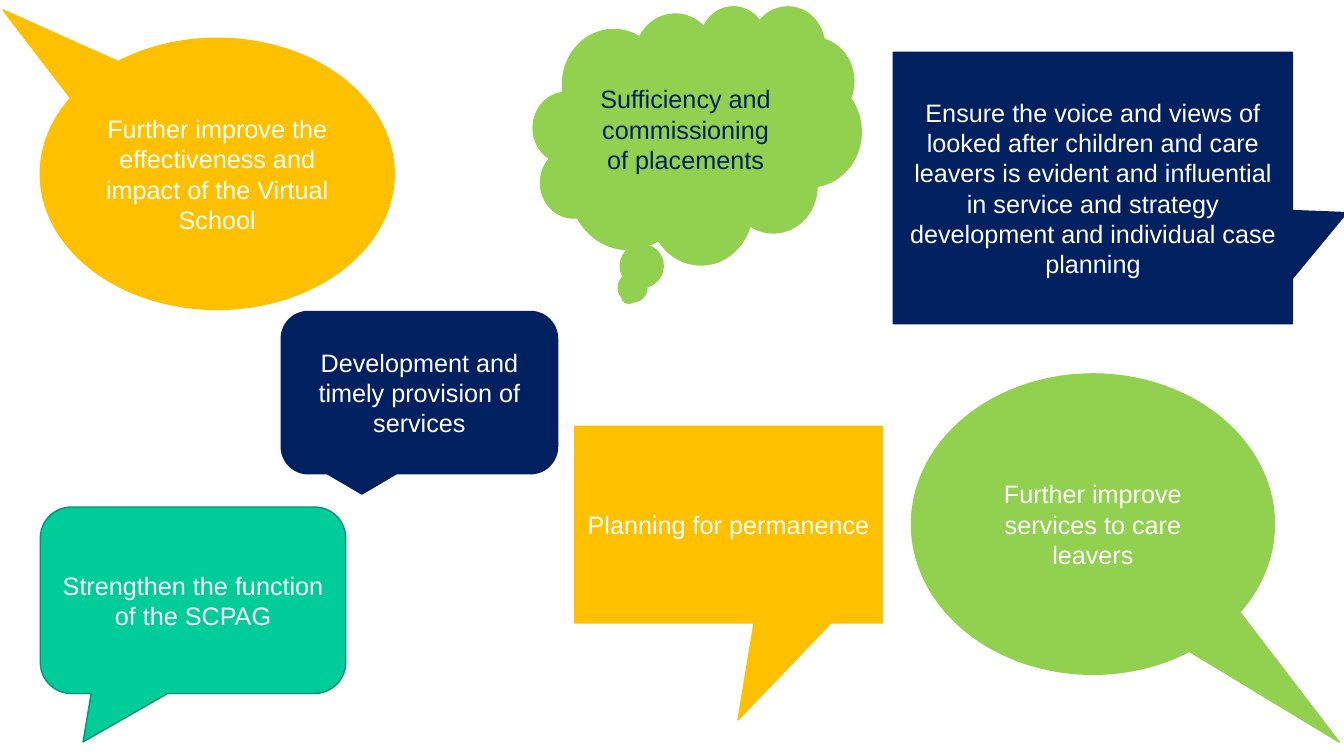
from dataclasses import dataclass

from pptx import Presentation
from pptx.dml.color import RGBColor
from pptx.enum.shapes import MSO_SHAPE as Preset
from pptx.enum.text import MSO_ANCHOR, PP_ALIGN
from pptx.util import Inches, Pt


@dataclass(frozen=True)
class Theme:
    navy: str = "002060"
    amber: str = "FFC000"
    lime: str = "92D050"
    teal: str = "00CC99"
    dark_teal: str = "009771"
    white: str = "FFFFFF"
    font: str = "Arial"
    text_size: int = 18
    outline: int = 1


THEME = Theme()

PRIORITIES = [
    (Preset.RECTANGULAR_CALLOUT, (8.86, 0.52, 3.96, 2.69), (0.636, 0.091), THEME.navy, {},
     "Ensure the voice and views of looked after children and care leavers is evident "
     "and influential in service and strategy development and individual case planning"),
    (Preset.OVAL_CALLOUT, (0.4, 0.38, 3.51, 2.69), (-0.606, -0.605), THEME.amber, {},
     "Further improve the effectiveness and impact of the Virtual School"),
    (Preset.CLOUD_CALLOUT, (5.29, 0.06, 3.25, 2.56), (), THEME.lime,
     {"text_color": THEME.navy},
     "Sufficiency and commissioning of placements"),
    (Preset.ROUNDED_RECTANGULAR_CALLOUT, (0.4, 5.03, 3.03, 1.85), (-0.36, 0.76), THEME.teal,
     {"outline_color": THEME.dark_teal},
     "Strengthen the function of the SCPAG"),
    (Preset.OVAL_CALLOUT, (9.04, 3.71, 3.6, 2.98), (0.679, 0.726), THEME.lime, {},
     "Further improve services to care leavers"),
    (Preset.RECTANGULAR_CALLOUT, (5.7, 4.23, 3.05, 1.95), (0.031, 0.994), THEME.amber, {},
     "Planning for permanence"),
    (Preset.ROUNDED_RECTANGULAR_CALLOUT, (2.79, 3.09, 2.74, 1.61), (), THEME.navy, {},
     "Development and timely provision of services"),
]


def rgb(color):
    return RGBColor.from_string(color)


def apply_format(target, values):
    for name, value in values.items():
        setattr(target, name, value)


def write_label(bubble, text, color):
    frame = bubble.text_frame
    apply_format(frame, {"word_wrap": True, "vertical_anchor": MSO_ANCHOR.MIDDLE})
    paragraph = frame.paragraphs[0]
    paragraph.alignment = PP_ALIGN.CENTER
    run = paragraph.add_run()
    run.text = text
    apply_format(run.font, {"name": THEME.font, "size": Pt(THEME.text_size)})
    run.font.color.rgb = rgb(color)


def add_bubble(slide, preset, box, tail, fill_color, text,
               outline_color=None, text_color=THEME.white):
    bubble = slide.shapes.add_shape(preset, *map(Inches, box))
    for index, offset in enumerate(tail):
        bubble.adjustments[index] = offset
    bubble.shadow.inherit = False
    bubble.fill.solid()
    bubble.fill.fore_color.rgb = rgb(fill_color)
    bubble.line.color.rgb = rgb(outline_color or fill_color)
    bubble.line.width = Pt(THEME.outline)
    write_label(bubble, text, text_color)


def main():
    deck = Presentation()
    apply_format(deck, {"slide_width": Inches(13.33), "slide_height": Inches(7.5)})
    slide = deck.slides.add_slide(deck.slide_layouts[6])
    for preset, box, tail, fill_color, colors, text in PRIORITIES:
        add_bubble(slide, preset, box, tail, fill_color, text, **colors)
    deck.save("out.pptx")


if __name__ == "__main__":
    main()
